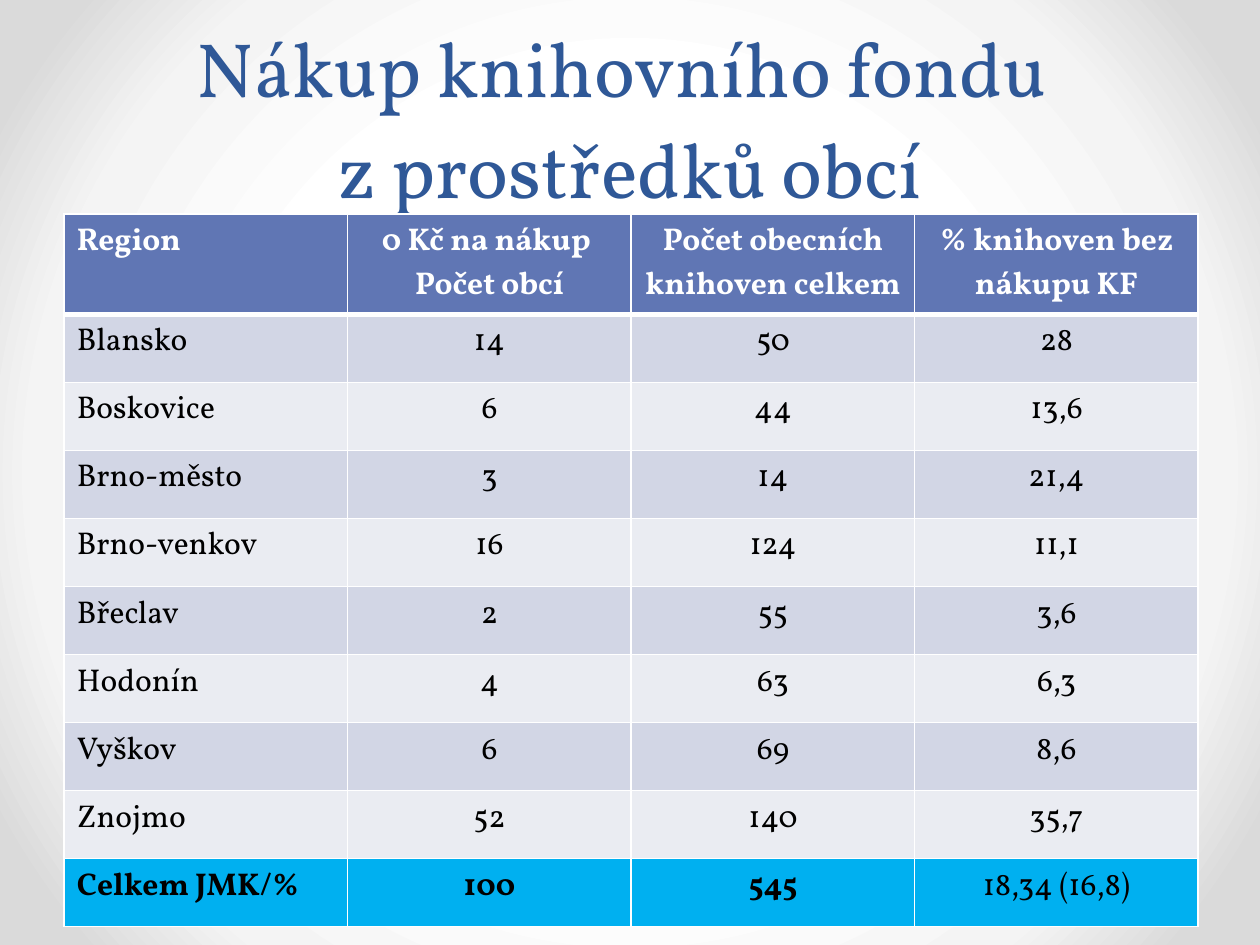
from lxml import etree
from pptx import Presentation
from pptx.dml.color import RGBColor
from pptx.enum.shapes import MSO_SHAPE
from pptx.enum.text import MSO_ANCHOR, MSO_AUTO_SIZE, PP_ALIGN
from pptx.oxml import parse_xml
from pptx.oxml.ns import nsdecls
from pptx.util import Inches, Pt

CENTER, LEFT = PP_ALIGN.CENTER, PP_ALIGN.LEFT
BOTTOM = MSO_ANCHOR.BOTTOM
NO_AUTOFIT = MSO_AUTO_SIZE.NONE
OVAL = MSO_SHAPE.OVAL

FONT = "Vollkorn"
HEADER_FILL, TOTAL_FILL = "6076B4", "00B0F0"
BAND_FILLS = ["D2D6E5", "EAECF2"]
ROWS = [
    ["Region", "0 Kč na nákup \nPočet obcí", "Počet obecních knihoven celkem",
     "% knihoven bez nákupu KF"],
    ["Blansko", "14", "50", "28"],
    ["Boskovice", "6", "44", "13,6"],
    ["Brno-město", "3", "14", "21,4"],
    ["Brno-venkov", "16", "124", "11,1"],
    ["Břeclav", "2", "55", "3,6"],
    ["Hodonín", "4", "63", "6,3"],
    ["Vyškov", "6", "69", "8,6"],
    ["Znojmo", "52", "140", "35,7"],
    ["Celkem JMK/%", "100", "545", "18,34 (16,8)"],
]
LAST_ROW = len(ROWS) - 1


def format_paragraph(paragraph, alignment, color, **font_values):
    paragraph.alignment = alignment
    paragraph.font.color.rgb = RGBColor.from_string(color)
    for name, value in {"name": FONT, **font_values}.items():
        setattr(paragraph.font, name, value)


def add_borders(cell, widths):
    """Draw white borders; widths maps lnL, lnR, lnT and lnB to points."""
    properties = cell._tc.get_or_add_tcPr()
    for position, (side, width) in enumerate(widths.items()):
        properties.insert(position, parse_xml(
            f'<a:{side} {nsdecls("a")} w="{Pt(width)}"><a:solidFill>'
            f'<a:srgbClr val="FFFFFF"/></a:solidFill></a:{side}>'))


presentation = Presentation()
presentation.slide_width = Inches(10)
presentation.slide_height = Inches(7.5)
slide = presentation.slides.add_slide(presentation.slide_layouts[5])

# Background: circular gradient from the centre
slide.background.fill.gradient()
gradient = slide.element.cSld.bg.bgPr.find(".//{*}gradFill")
background = parse_xml(
    f'<a:gradFill {nsdecls("a")} rotWithShape="1"><a:gsLst/><a:path path="circle">'
    '<a:fillToRect l="50000" t="50000" r="50000" b="50000"/></a:path></a:gradFill>')
for percent, color in [(50, "FFFFFF"), (76, "F4F4F4"), (92, "DADADA")]:
    stop = etree.SubElement(background[0], background[0].tag.replace("gsLst", "gs"),
                            pos=str(percent * 1000))
    etree.SubElement(stop, stop.tag.replace("}gs", "}srgbClr"), val=color)
gradient.getparent().replace(gradient, background)

# Small dots in the lower corners
for left in (9.25, 0.62):
    dot = slide.shapes.add_shape(OVAL, Inches(left), Inches(7.11), Inches(0.09), Inches(0.09))
    dot.shadow.inherit = False
    dot.fill.solid()
    dot.fill.fore_color.rgb = RGBColor.from_string("808080")
    dot.line.fill.background()

# Title
title = slide.shapes.title
title.left, title.top, title.width, title.height = map(Inches, (0.5, 0, 9, 1.75))
title.text_frame.text = "Nákup knihovního fondu \vz prostředků obcí"
title.text_frame.auto_size = NO_AUTOFIT
title.text_frame.vertical_anchor = BOTTOM
title_paragraph = title.text_frame.paragraphs[0]
title_paragraph.line_spacing = Pt(58)
format_paragraph(title_paragraph, CENTER, "2F5897", size=Pt(44))

# Table of regions
table = slide.shapes.add_table(len(ROWS), len(ROWS[0]), Inches(0.51), Inches(1.7),
                               Inches(9), Inches(5.55)).table
for row_index, values in enumerate(ROWS):
    is_header, is_total = row_index == 0, row_index == LAST_ROW
    table.rows[row_index].height = Inches(0.69 if is_header else 0.54)
    if is_header:
        fill = HEADER_FILL
    elif is_total:
        fill = TOTAL_FILL
    else:
        fill = BAND_FILLS[(row_index - 1) % 2]
    for column_index, value in enumerate(values):
        cell = table.cell(row_index, column_index)
        cell.text = value
        cell.fill.solid()
        cell.fill.fore_color.rgb = RGBColor.from_string(fill)
        add_borders(cell, {"lnL": 1, "lnR": 1, "lnT": 3 if row_index == 1 else 1,
                           "lnB": 3 if is_header else 1})
        for paragraph in cell.text_frame.paragraphs:
            format_paragraph(paragraph, CENTER if column_index else LEFT,
                             "FFFFFF" if is_header else "000000", size=Pt(18),
                             bold=is_header or (is_total and column_index < 3))

presentation.save("out.pptx")
